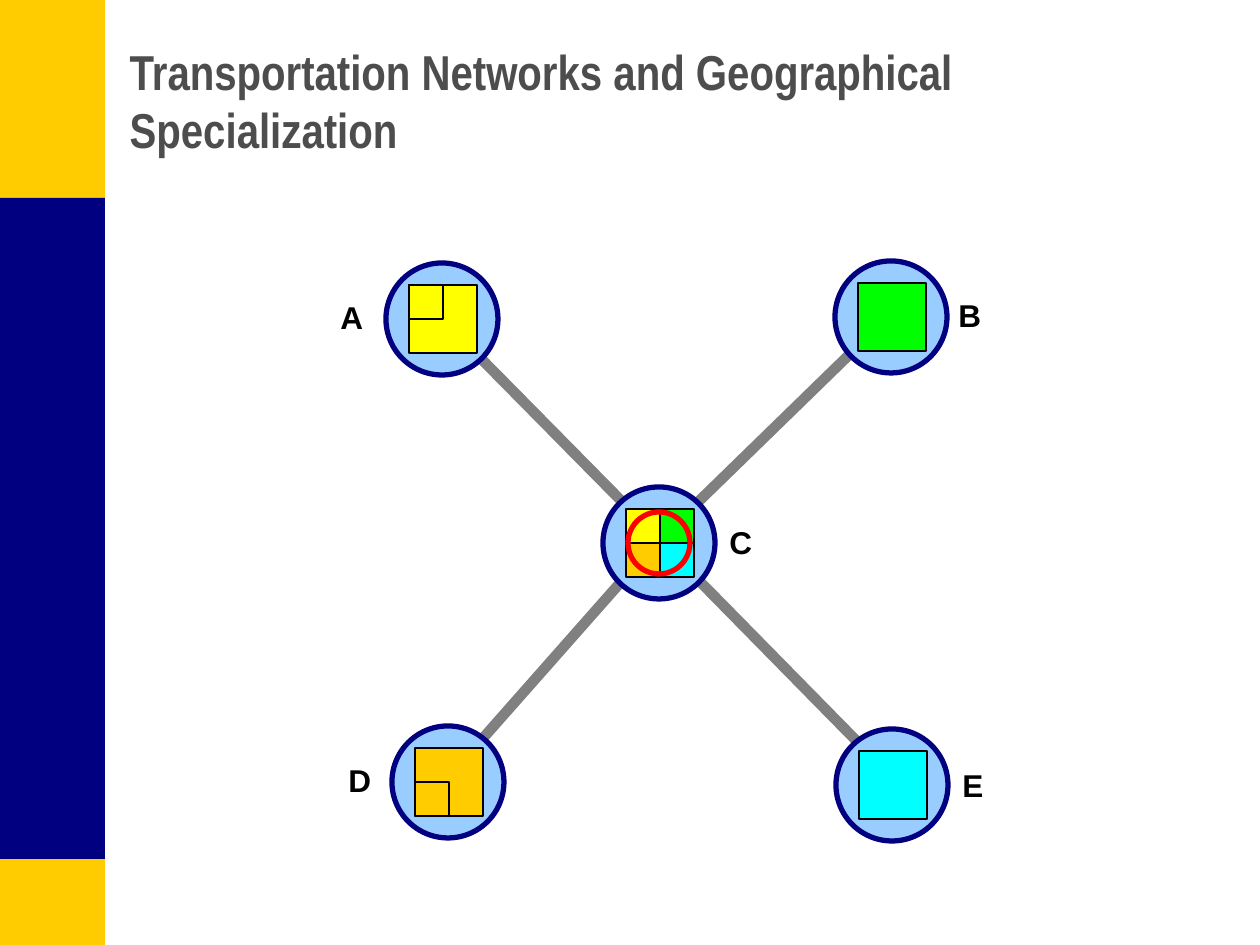
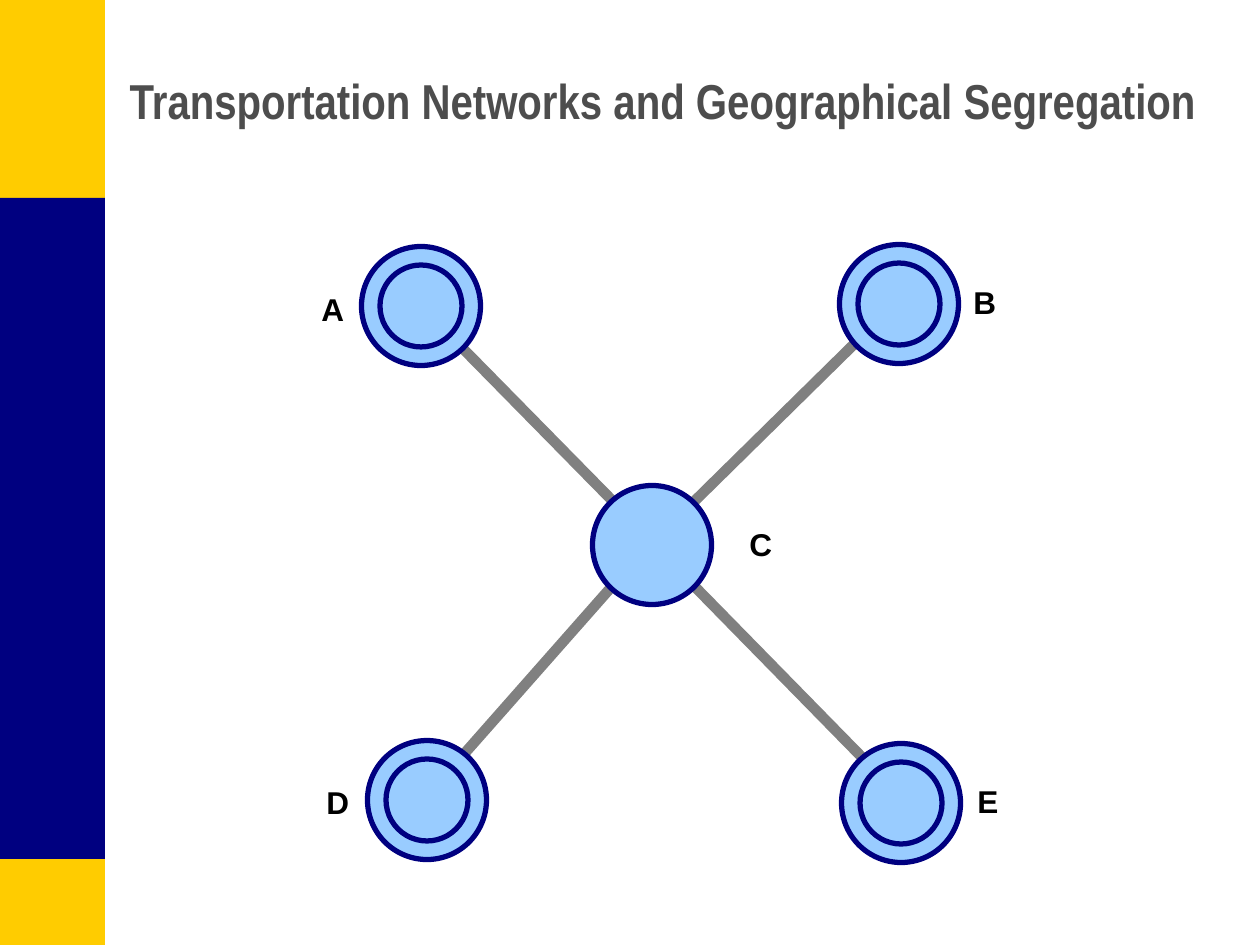
from pptx import Presentation
from pptx.dml.color import RGBColor
from pptx.enum.shapes import MSO_SHAPE
from pptx.enum.text import MSO_ANCHOR, MSO_AUTO_SIZE, PP_ALIGN
from pptx.util import Emu, Pt

PX = 914400 / 126
SLIDE_WIDTH, SLIDE_HEIGHT = 1260, 945
BAND_WIDTH = 105
STOCK = 68
QUARTER = STOCK // 2

COLORS = {
    "gold": "FFCC00", "navy": "000080", "title": "4D4D4D", "black": "000000",
    "link": "808080", "node": "99CCFF", "yellow": "FFFF00", "green": "00FF00",
    "cyan": "00FFFF", "red": "FF0000",
}

# Centre of each node, and the left top corner of its label
SPECIALIZATION_NODES = {
    "A": ((442, 319), (328, 292)),
    "B": ((891, 317), (946, 290)),
    "C": ((659, 543), (717, 517)),
    "D": ((448, 782), (336, 755)),
    "E": ((892, 785), (950, 760)),
}
SEGREGATION_NODES = {
    "A": ((421, 306), (309, 284)),
    "B": ((899, 304), (961, 277)),
    "C": ((652, 545), (737, 519)),
    "D": ((427, 800), (314, 777)),
    "E": ((901, 803), (965, 776)),
}

# Each route runs from a lower node through the hub to an upper node
SPECIALIZATION_ROUTES = [
    [(891, 776), (659, 540), (891, 314)],
    [(447, 779), (659, 539), (442, 319)],
]
SEGREGATION_ROUTES = [
    [(898, 794), (652, 543), (898, 301)],
    [(427, 796), (652, 541), (421, 306)],
]


def px(length):
    return Emu(round(length * PX))


def rgb(name):
    return RGBColor.from_string(COLORS[name])


def paint(shape, fill=None, line=None, width=0.75):
    shape.shadow.inherit = False
    if fill:
        shape.fill.solid()
        shape.fill.fore_color.rgb = rgb(fill)
    else:
        shape.fill.background()
    if line:
        shape.line.color.rgb = rgb(line)
        shape.line.width = Pt(width)
    else:
        shape.line.fill.background()


def format_text(frame, size, font, color):
    for run in frame.paragraphs[0].runs:
        run.font.size = Pt(size)
        run.font.name = font
        run.font.bold = True
        run.font.color.rgb = rgb(color)


def add_box(slide, left, top, width, height, fill, line=None):
    box = slide.shapes.add_shape(
        MSO_SHAPE.RECTANGLE, px(left), px(top), px(width), px(height))
    paint(box, fill, line)
    return box


def add_circle(slide, center, diameter, fill="node", line="navy"):
    x, y = center
    circle = slide.shapes.add_shape(
        MSO_SHAPE.OVAL, px(x - diameter / 2), px(y - diameter / 2),
        px(diameter), px(diameter))
    paint(circle, fill, line, 3)


def add_route(slide, points):
    builder = slide.shapes.build_freeform(*points[0], scale=PX)
    builder.add_line_segments(points[1:], close=False)
    paint(builder.convert_to_shape(), line="link", width=6)


def add_label(slide, letter, corner):
    left, top = corner
    label = slide.shapes.add_textbox(px(left), px(top), px(48), px(50))
    label.text_frame.word_wrap = False
    label.text_frame.text = letter
    format_text(label.text_frame, 18, "Arial", "black")


def add_stock(slide, center, color):
    x, y = center
    add_box(slide, x + 1 - QUARTER, y - QUARTER, STOCK, STOCK, color, "black")


def add_quarter(slide, center, column, row, color):
    """Draw one quarter of a stock square; column and row are 0 or 1."""
    x, y = center
    add_box(slide, x + 1 + (column - 1) * QUARTER, y + (row - 1) * QUARTER,
            QUARTER, QUARTER, color, "black")


def add_bands_to_layout(layout, slide):
    """Draw the side bands on the slide, then move them behind the layout."""
    bands = [(0, 199, "gold"), (859, 86, "gold"), (198, 661, "navy")]
    for number, (top, height, color) in enumerate(bands):
        band = add_box(slide, 0, top, BAND_WIDTH, height, color)
        band.element.nvSpPr.cNvPr.set("id", str(100 + number))
        layout.shapes.element.insert(2 + number, band.element)


def add_titled_slide(deck, layout, title_text):
    slide = deck.slides.add_slide(layout)
    title = slide.shapes.title
    title.left, title.top = px(117), px(21)
    title.width, title.height = px(1121), px(158)
    frame = title.text_frame
    frame.text = title_text
    frame.word_wrap = True
    frame.auto_size = MSO_AUTO_SIZE.NONE
    frame.vertical_anchor = MSO_ANCHOR.MIDDLE
    frame.paragraphs[0].alignment = PP_ALIGN.LEFT
    format_text(frame, 28, "Arial Narrow", "title")
    return slide


def add_network(slide, routes, nodes, diameter):
    for points in routes:
        add_route(slide, points)
    for letter, (center, label_corner) in nodes.items():
        add_circle(slide, center, diameter)
        add_label(slide, letter, label_corner)


def fill_specialization(slide):
    add_network(slide, SPECIALIZATION_ROUTES, SPECIALIZATION_NODES, 112)
    centers = {letter: node[0] for letter, node in SPECIALIZATION_NODES.items()}
    goods = {"A": "yellow", "B": "green", "D": "gold", "E": "cyan"}
    for index, (letter, color) in enumerate(goods.items()):
        row, column = divmod(index, 2)
        add_stock(slide, centers[letter], color)
        add_quarter(slide, centers["C"], column, row, color)
        if column == 0:
            add_quarter(slide, centers[letter], column, row, color)
    add_circle(slide, centers["C"], 62, None, "red")


def fill_segregation(slide):
    add_network(slide, SEGREGATION_ROUTES, SEGREGATION_NODES, 119)
    for letter, (center, _) in SEGREGATION_NODES.items():
        if letter != "C":
            add_circle(slide, center, 82)


def main():
    deck = Presentation()
    deck.slide_width, deck.slide_height = px(SLIDE_WIDTH), px(SLIDE_HEIGHT)
    layout = deck.slide_layouts.get_by_name("Title Only")

    specialization = add_titled_slide(
        deck, layout,
        "Transportation Networks and Geographical Specialization")
    add_bands_to_layout(layout, specialization)
    fill_specialization(specialization)

    segregation = add_titled_slide(
        deck, layout, "Transportation Networks and Geographical Segregation")
    fill_segregation(segregation)

    deck.save("out.pptx")


if __name__ == "__main__":
    main()
